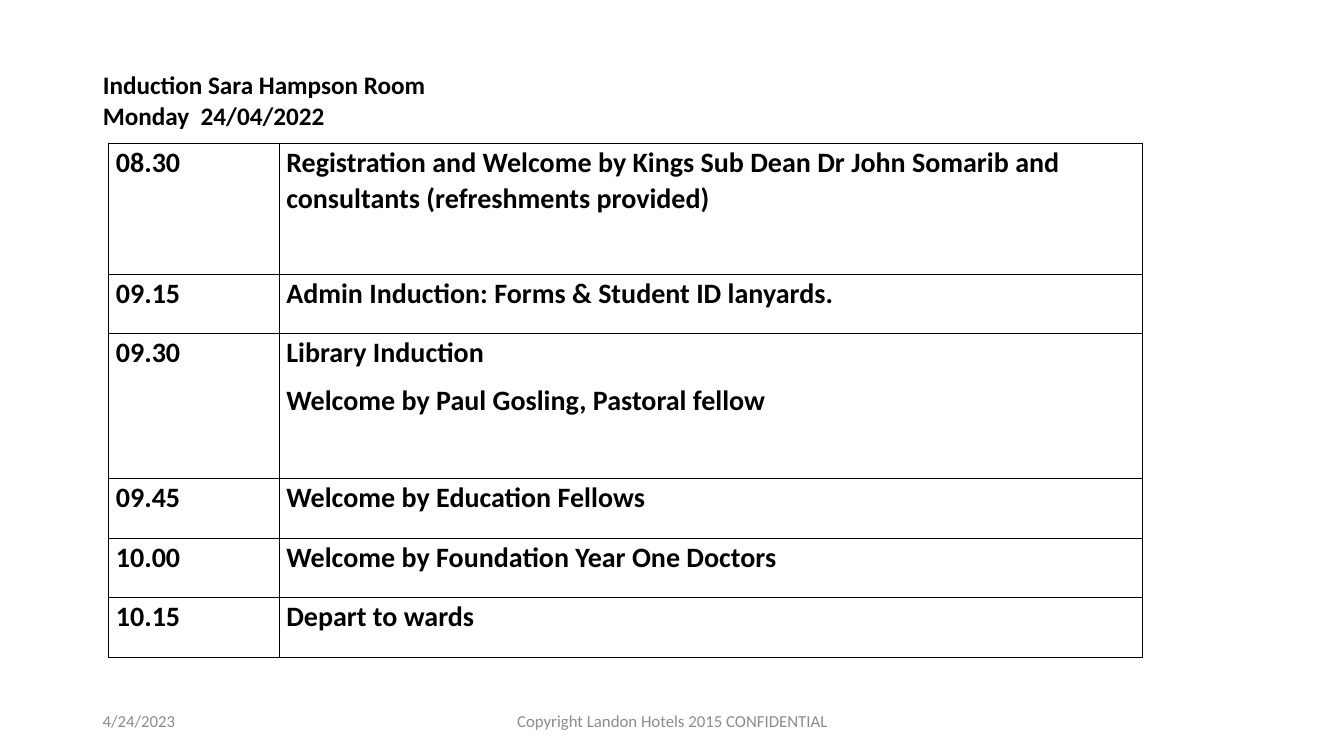
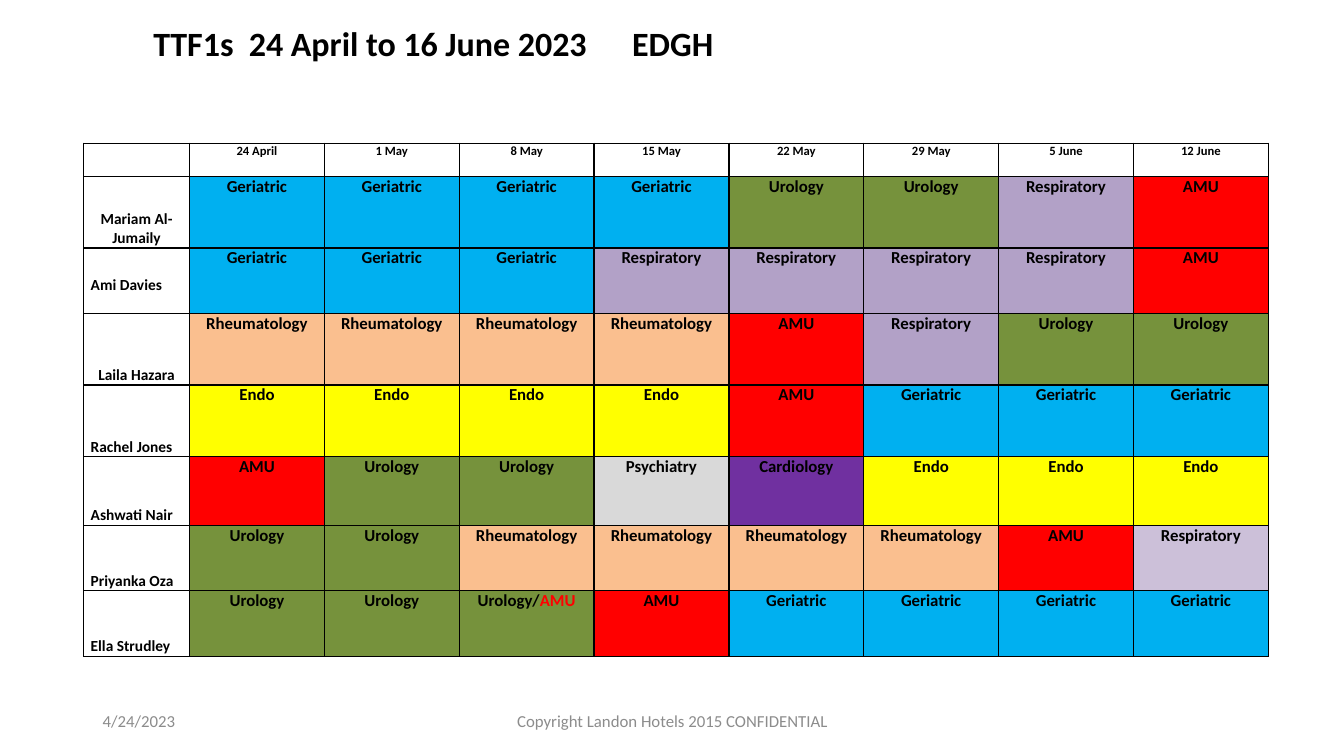
from dataclasses import dataclass
from lxml.etree import SubElement
from pptx import Presentation
from pptx.dml.color import RGBColor
from pptx.enum.text import MSO_ANCHOR, MSO_AUTO_SIZE, PP_ALIGN
from pptx.oxml.ns import qn
from pptx.util import Pt

PX = 9144
LEFT, MID = PP_ALIGN.LEFT, PP_ALIGN.CENTER

DATE = "4/24/2023"
NOTE = "Copyright Landon Hotels 2015 CONFIDENTIAL"

HEAD = ["Induction Sara Hampson Room", "Monday  24/04/2022"]
PLAN = [
    ("08.30", ["Registration and Welcome by Kings Sub Dean Dr John Somarib and "
               "consultants (refreshments provided)"], 130),
    ("09.15", ["Admin Induction: Forms & Student ID lanyards."], 59),
    ("09.30", ["Library Induction", "Welcome by Paul Gosling, Pastoral fellow"], 144),
    ("09.45", ["Welcome by Education Fellows"], 59),
    ("10.00", ["Welcome by Foundation Year One Doctors"], 59),
    ("10.15", ["Depart to wards"], 59),
]

TERM = ["TTF1s  24 April to 16 June 2023\tEDGH"]
WEEKS = ["24 April", "1 May", "8 May", "15 May", "22 May", "29 May", "5 June", "12 June"]
WARDS = {
    "G": ("Geriatric", "00B0F0"),
    "U": ("Urology", "76923C"),
    "R": ("Respiratory", "B2A1C7"),
    "L": ("Respiratory", "CCC0D9"),
    "A": ("AMU", "FF0000"),
    "H": ("Rheumatology", "FABF8F"),
    "E": ("Endo", "FFFF00"),
    "P": ("Psychiatry", "D9D9D9"),
    "C": ("Cardiology", "7030A0"),
    "X": ([("Urology/", "000000"), ("AMU", "FF0000")], "76923C"),
}
ROTA = [
    ("Mariam Al-Jumaily", "GGGGUURA", 71, MID, 0),
    ("Ami Davies", "GGGRRRRA", 65, LEFT, 19),
    ("Laila Hazara", "HHHHARUU", 71, MID, 0),
    ("Rachel Jones", "EEEEAGGG", 71, LEFT, 0),
    ("Ashwati Nair", "AUUPCEEE", 68, LEFT, 0),
    ("Priyanka Oza", "UUHHHHAL", 65, LEFT, 0),
    ("Ella Strudley", "UUXAGGGG", 65, LEFT, 0),
]


@dataclass(frozen=True)
class Theme:
    face: str = "Calibri"
    ink: str = "000000"
    gray: str = "8C8C8C"
    head: float = 18
    term: float = 24.3
    plan: float = 20
    week: float = 9
    name: float = 11
    ward: float = 12
    foot: float = 12
    line: float = 1


LOOK = Theme()


def px(*nums):
    return [round(n * PX) for n in nums]


def put(obj, vals):
    for key, val in vals.items():
        setattr(obj, key, val)


def write(frame, lines, size, ink=LOOK.ink, bold=True, tab=None, **form):
    for i, line in enumerate(lines):
        para = frame.paragraphs[0] if i == 0 else frame.add_paragraph()
        if tab:
            stops = SubElement(para._p.get_or_add_pPr(), qn("a:tabLst"))
            SubElement(stops, qn("a:tab"), pos=str(tab * PX), algn="l")
        put(para, form)
        for text, tint in [(line, ink)] if isinstance(line, str) else line:
            run = para.add_run()
            run.text = text
            put(run.font, {"name": LOOK.face, "size": Pt(size), "bold": bold})
            run.font.color.rgb = RGBColor.from_string(tint)


def page(deck, lines, box, size, tab=None):
    slide = deck.slides.add_slide(deck.slide_layouts[5])
    title = slide.shapes.title
    put(title, dict(zip(("left", "top", "width", "height"), px(*box))))
    put(title.text_frame, {"auto_size": MSO_AUTO_SIZE.NONE, "word_wrap": True,
                           "vertical_anchor": MSO_ANCHOR.MIDDLE})
    write(title.text_frame, lines, size, tab=tab, alignment=LEFT)
    for text, x, wide, side in ((DATE, 92, 300, LEFT), (NOTE, 442, 450, MID)):
        frame = slide.shapes.add_textbox(*px(x, 695, wide, 40)).text_frame
        put(frame, {"word_wrap": True, "vertical_anchor": MSO_ANCHOR.MIDDLE})
        write(frame, [text], LOOK.foot, LOOK.gray, False, alignment=side)
    return slide


def grid(slide, x, y, cols, rows):
    shape = slide.shapes.add_table(len(rows), len(cols), *px(x, y, sum(cols), sum(rows)))
    table = shape.table
    put(table, {"first_row": False, "horz_banding": False})
    for col, wide in zip(table.columns, px(*cols)):
        col.width = wide
    for row, high in zip(table.rows, px(*rows)):
        row.height = high
    for cell in table.iter_cells():
        edge = px(7)[0]
        put(cell, {"margin_left": edge, "margin_right": edge,
                   "margin_top": 0, "margin_bottom": 0})
        props = cell._tc.get_or_add_tcPr()
        for side in ("lnL", "lnR", "lnT", "lnB"):
            line = SubElement(props, qn("a:" + side), w=str(Pt(LOOK.line)))
            fill = SubElement(line, qn("a:solidFill"))
            SubElement(fill, qn("a:srgbClr"), val=LOOK.ink)
        cell.fill.background()
    return table


def plan(deck):
    slide = page(deck, HEAD, (92, 64, 1150, 70), LOOK.head)
    table = grid(slide, 108, 142, [169, 856], [high for *_, high in PLAN])
    form = {"line_spacing": 1.07, "space_after": Pt(8)}
    for r, (time, lines, _) in enumerate(PLAN):
        for c, text in enumerate(([time], lines)):
            write(table.cell(r, c).text_frame, text, LOOK.plan, **form)


def rota(deck):
    slide = page(deck, TERM, (142, 15, 1100, 55), LOOK.term, tab=475)
    count = len(WEEKS)
    cols = [105] + [1070 / count] * count
    table = grid(slide, 83, 142, cols, [33] + [row[2] for row in ROTA])
    for c, week in enumerate(WEEKS, 1):
        write(table.cell(0, c).text_frame, [week], LOOK.week, alignment=MID)
    for r, (name, codes, _, side, gap) in enumerate(ROTA, 1):
        cell = table.cell(r, 0)
        put(cell, {"vertical_anchor": MSO_ANCHOR.BOTTOM, "margin_bottom": gap * PX})
        write(cell.text_frame, [name], LOOK.name, alignment=side)
        for c, code in enumerate(codes, 1):
            text, tint = WARDS[code]
            cell = table.cell(r, c)
            cell.fill.solid()
            cell.fill.fore_color.rgb = RGBColor.from_string(tint)
            write(cell.text_frame, [text], LOOK.ward, alignment=MID)


def main():
    deck = Presentation()
    put(deck, dict(zip(("slide_width", "slide_height"), px(1333, 750))))
    plan(deck)
    rota(deck)
    deck.save("out.pptx")


if __name__ == "__main__":
    main()
